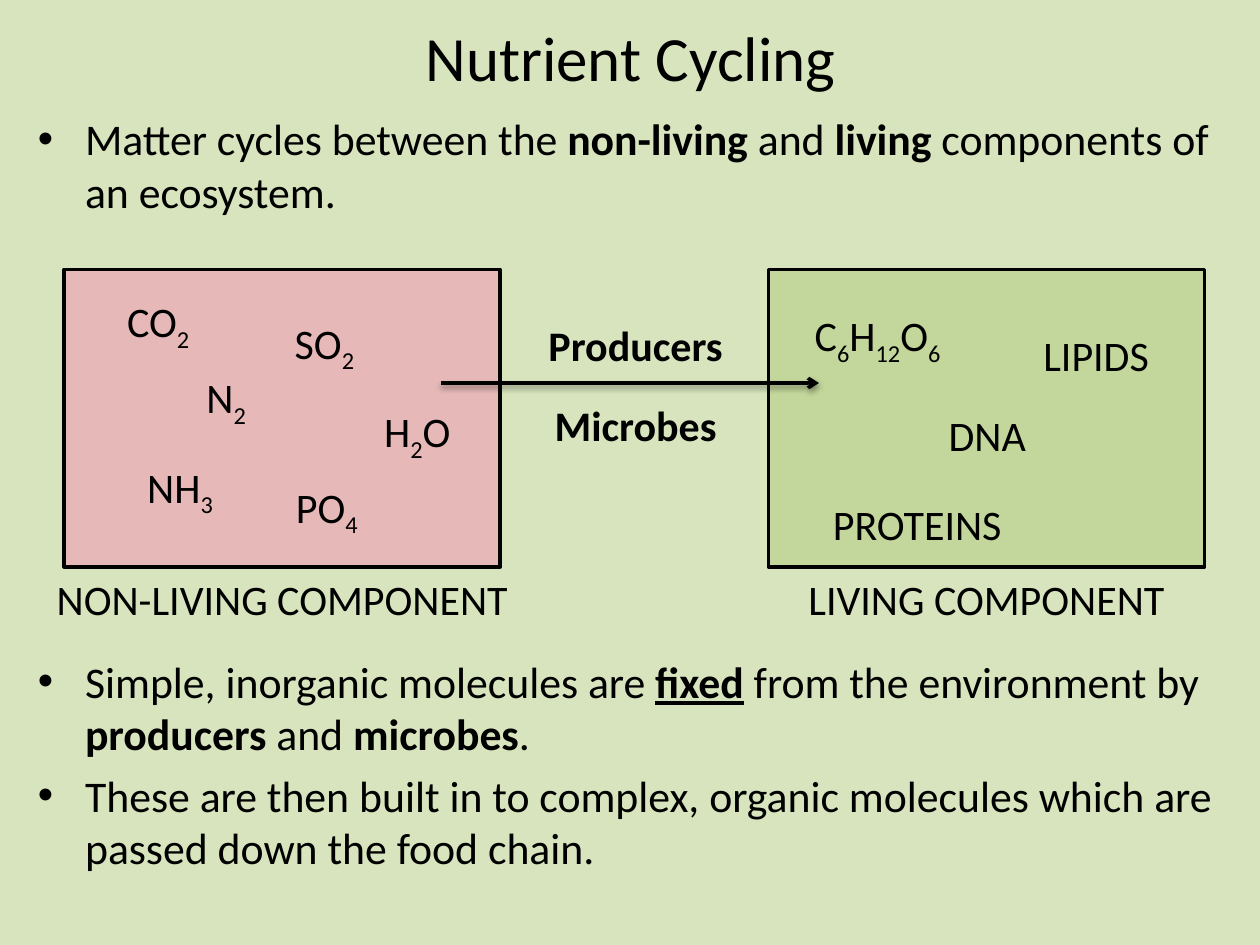
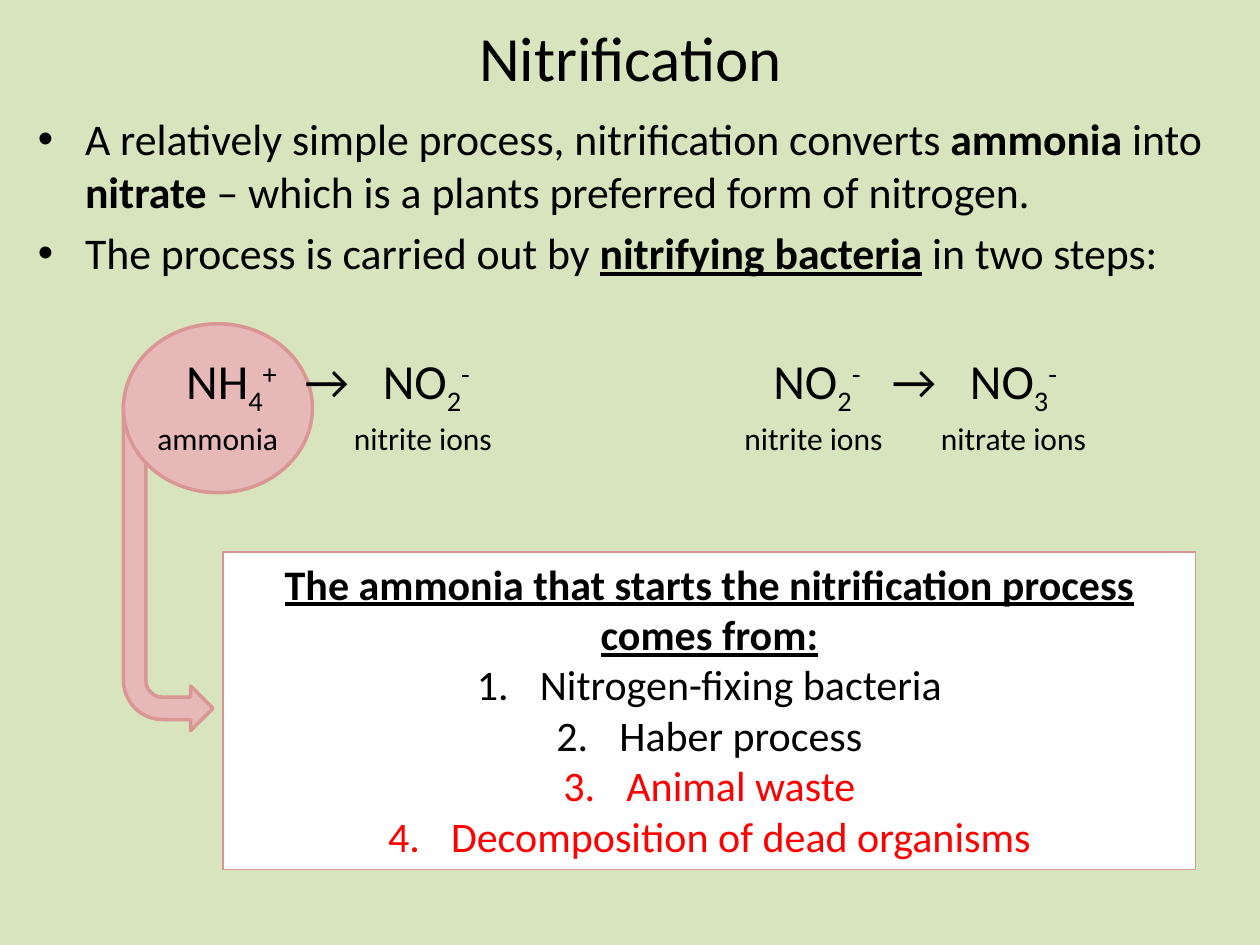
from dataclasses import dataclass
from itertools import groupby
from typing import NamedTuple

import lxml.etree
import pptx
import pptx.dml.color
import pptx.enum.shapes
import pptx.enum.text
import pptx.oxml.ns
import pptx.util

RGB = pptx.dml.color.RGBColor
MINT = RGB(0xD7, 0xE4, 0xBD)
LEAF = RGB(0xC3, 0xD6, 0x9B)
PINK = RGB(0xE6, 0xB9, 0xB8)
ROSE = RGB(0xD9, 0x96, 0x94)
BLACK = RGB(0, 0, 0)
WHITE = RGB(0xFF, 0xFF, 0xFF)
RED = RGB(0xFF, 0, 0)

FONT = "Calibri"
COLS, ROWS = 100, 75
CELL = pptx.util.Inches(0.1)
LINE = 5  # rows of a one-line label
MARKS = "*|~^"  # bold, bold underlined, subscript, superscript
ALIGN = pptx.enum.text.PP_ALIGN
SHAPE = pptx.enum.shapes.MSO_SHAPE


class Box(NamedTuple):
    """A place on the grid, in columns and rows."""
    col: float
    row: float
    wide: float
    high: float

    def emu(self) -> list[int]:
        return [round(part * CELL) for part in self]


@dataclass
class Label:
    text: str
    box: Box
    mid: bool = False


@dataclass
class Pan:
    name: str
    col: float
    fill: RGB


@dataclass
class Step:
    """A reaction and the names of its two ions."""
    col: float
    terms: str
    names: str


TITLE = Box(2, 0.5, 96.1, 7.9)
BODY = Box(2, 8.4, 96.1, 64.6)

PAN_ROW, PAN_WIDE, PAN_HIGH = 21.4, 34.6, 23.6
NAME_WIDE = 39.4
PANS = [
    Pan("NON-LIVING COMPONENT", 5.1, PINK),
    Pan("LIVING COMPONENT", 61, LEAF),
]
LABELS = [
    Label("CO~2~", Box(9.1, 23, 7.1, LINE)),
    Label("N~2~", Box(15.4, 29, 7.1, LINE)),
    Label("SO~2~", Box(22.4, 24.7, 7.1, LINE)),
    Label("NH~3~", Box(10.7, 36.1, 7.8, LINE)),
    Label("PO~4~", Box(22.5, 37.7, 7.8, LINE)),
    Label("H~2~O", Box(29.5, 31.7, 7.8, LINE)),
    Label("C~6~H~12~O~6~", Box(60.2, 24.1, 18.9, LINE), True),
    Label("DNA", Box(68.9, 32, 18.9, LINE), True),
    Label("PROTEINS", Box(61, 39.1, 23.6, LINE), True),
    Label("LIPIDS", Box(75.2, 25.7, 23.6, LINE), True),
    Label("*Producers*", Box(40.6, 24.9, 19.7, LINE), True),
    Label("*Microbes*", Box(40.6, 31.2, 19.7, LINE), True),
]
STEPS = [
    Step(13.8, "NH~4~^+^\t→\tNO~2~^-^", "ammonia\tnitrite ions"),
    Step(60.4, "NO~2~^-^\t→\tNO~3~^-^", "nitrite ions\tnitrate ions"),
]
FIRST, SECOND = 9.4, 15.6  # tab stops, in columns
ORIGINS = [
    ("Nitrogen-fixing bacteria", BLACK),
    ("Haber process", BLACK),
    ("Animal waste", RED),
    ("Decomposition of dead organisms", RED),
]


def add(root, tag: str, **attrs):
    """Append a DrawingML element."""
    node = lxml.etree.SubElement(root, pptx.oxml.ns.qn(tag))
    for key, value in attrs.items():
        node.set(key, str(value))
    return node


def write(frame, text: str, *, size: float = 24, color: RGB = BLACK,
          align=None, gap: float | None = None, tabs: tuple = (),
          count: bool = False) -> None:
    """Add one paragraph; MARKS in the text switch its styles on and off."""
    para = frame.paragraphs[0]
    if para.runs:
        para = frame.add_paragraph()
    if align is not None:
        para.alignment = align
    if gap is not None:
        para.space_before = pptx.util.Pt(gap)
    props = para._p.get_or_add_pPr()
    if count:
        props.set("marL", str(5 * CELL))
        props.set("indent", str(-5 * CELL))
        add(props, "a:buFont", typeface="+mj-lt")
        add(props, "a:buAutoNum", type="arabicPeriod")
    if tabs:
        stops = add(props, "a:tabLst")
        for col in tabs:
            add(stops, "a:tab", pos=round(col * CELL), algn="l")
    styles = set()
    for mark, chars in groupby(text, key=lambda char: char in MARKS):
        part = "".join(chars)
        if mark:
            styles ^= set(part)
            continue
        run = para.add_run()
        run.text = part
        font = run.font
        font.name, font.size = FONT, pptx.util.Pt(size)
        font.color.rgb = color
        if styles & set("*|"):
            font.bold = True
        if "|" in styles:
            font.underline = True
        if styles & set("~^"):
            base = -25000 if "~" in styles else 30000
            font._element.set("baseline", str(base))


def label(slide, text: str, box: Box, **form) -> None:
    frame = slide.shapes.add_textbox(*box.emu()).text_frame
    frame.word_wrap = True
    write(frame, text, **form)


def draw(slide, kind, box: Box, fill: RGB, edge: RGB, width: float = 2):
    shape = slide.shapes.add_shape(kind, *box.emu())
    shape.shadow.inherit = False
    shape.fill.solid()
    shape.fill.fore_color.rgb = fill
    shape.line.color.rgb = edge
    shape.line.width = pptx.util.Pt(width)
    return shape


def arrow(slide, start: float, end: float, row: float) -> None:
    """Draw a level arrow with a soft shadow."""
    ends = [round(part * CELL) for part in (start, row, end, row)]
    link = slide.shapes.add_connector(
        pptx.enum.shapes.MSO_CONNECTOR.STRAIGHT, *ends)
    link.line.color.rgb = BLACK
    link.line.width = pptx.util.Pt(2)
    add(link.line._get_or_add_ln(), "a:tailEnd", type="arrow")
    glow = add(add(link._element.spPr, "a:effectLst"), "a:outerShdw",
               blurRad=pptx.util.Pt(3.1), dist=pptx.util.Pt(1.6),
               dir=5400000, rotWithShape=0)
    add(add(glow, "a:srgbClr", val=BLACK), "a:alpha", val=38000)


def start(deck, title: str, points: list[tuple[str, float | None]]):
    """Add a slide with its title and (text, space before) bullets."""
    slide = deck.slides.add_slide(deck.slide_layouts[1])
    head, body = slide.placeholders
    for holder, box in ((head, TITLE), (body, BODY)):
        holder.left, holder.top, holder.width, holder.height = box.emu()
        holder.text_frame.auto_size = pptx.enum.text.MSO_AUTO_SIZE.NONE
    write(head.text_frame, title, size=36, align=ALIGN.CENTER)
    for text, gap in points:
        write(body.text_frame, text, size=25, gap=gap)
    return slide


def cycling(deck) -> None:
    slide = start(deck, "Nutrient Cycling", [
        ("Matter cycles between the *non-living* and *living* components "
         "of an ecosystem.", None),
        ("Simple, inorganic molecules are |fixed| from the environment by "
         "*producers *and *microbes*.", 250),
        ("These are then built in to complex, organic molecules which are "
         "passed down the food chain.", None),
    ])
    for pan in PANS:
        draw(slide, SHAPE.RECTANGLE,
             Box(pan.col, PAN_ROW, PAN_WIDE, PAN_HIGH), pan.fill, BLACK)
        name = Box(pan.col + (PAN_WIDE - NAME_WIDE) / 2, PAN_ROW + PAN_HIGH,
                   NAME_WIDE, LINE)
        label(slide, pan.name, name, align=ALIGN.CENTER)
    for item in LABELS:
        label(slide, item.text, item.box,
              align=ALIGN.CENTER if item.mid else None)
    arrow(slide, 35, 65, 30.4)


def nitrify(deck) -> None:
    slide = start(deck, "Nitrification", [
        ("A relatively simple process, nitrification converts *ammonia *into "
         "*nitrate* – which is a plants preferred form of nitrogen.", None),
        ("The process is carried out by |nitrifying bacteria| in two steps:",
         None),
    ])
    bend = draw(slide, SHAPE.BENT_ARROW, Box(9.8, 32, 7.1, 26), PINK, ROSE)
    bend._element.spPr.xfrm.set("flipV", "1")
    draw(slide, SHAPE.OVAL, Box(9.8, 25.7, 15, 13.4), PINK, ROSE)
    for step in STEPS:
        label(slide, step.terms, Box(step.col, 27.3, 26, 5.7), size=28,
              tabs=(FIRST, SECOND))
        label(slide, step.names, Box(step.col - 2.3, 32.8, 30, 4), size=18,
              tabs=(SECOND,))

    card = draw(slide, SHAPE.RECTANGLE, Box(17.7, 43.8, 77.2, 25.2),
                WHITE, ROSE, 0.75)
    frame = card.text_frame
    frame.word_wrap = True
    frame.vertical_anchor = pptx.enum.text.MSO_ANCHOR.TOP
    write(frame, "|The ammonia that starts the nitrification process "
          "comes from:|", align=ALIGN.CENTER)
    for text, color in ORIGINS:
        write(frame, text, color=color, align=ALIGN.CENTER, count=True)


def main() -> None:
    deck = pptx.Presentation()
    deck.slide_width, deck.slide_height = COLS * CELL, ROWS * CELL
    back = deck.slide_master.background.fill
    back.solid()
    back.fore_color.rgb = MINT
    cycling(deck)
    nitrify(deck)
    deck.save("out.pptx")


if __name__ == "__main__":
    main()
